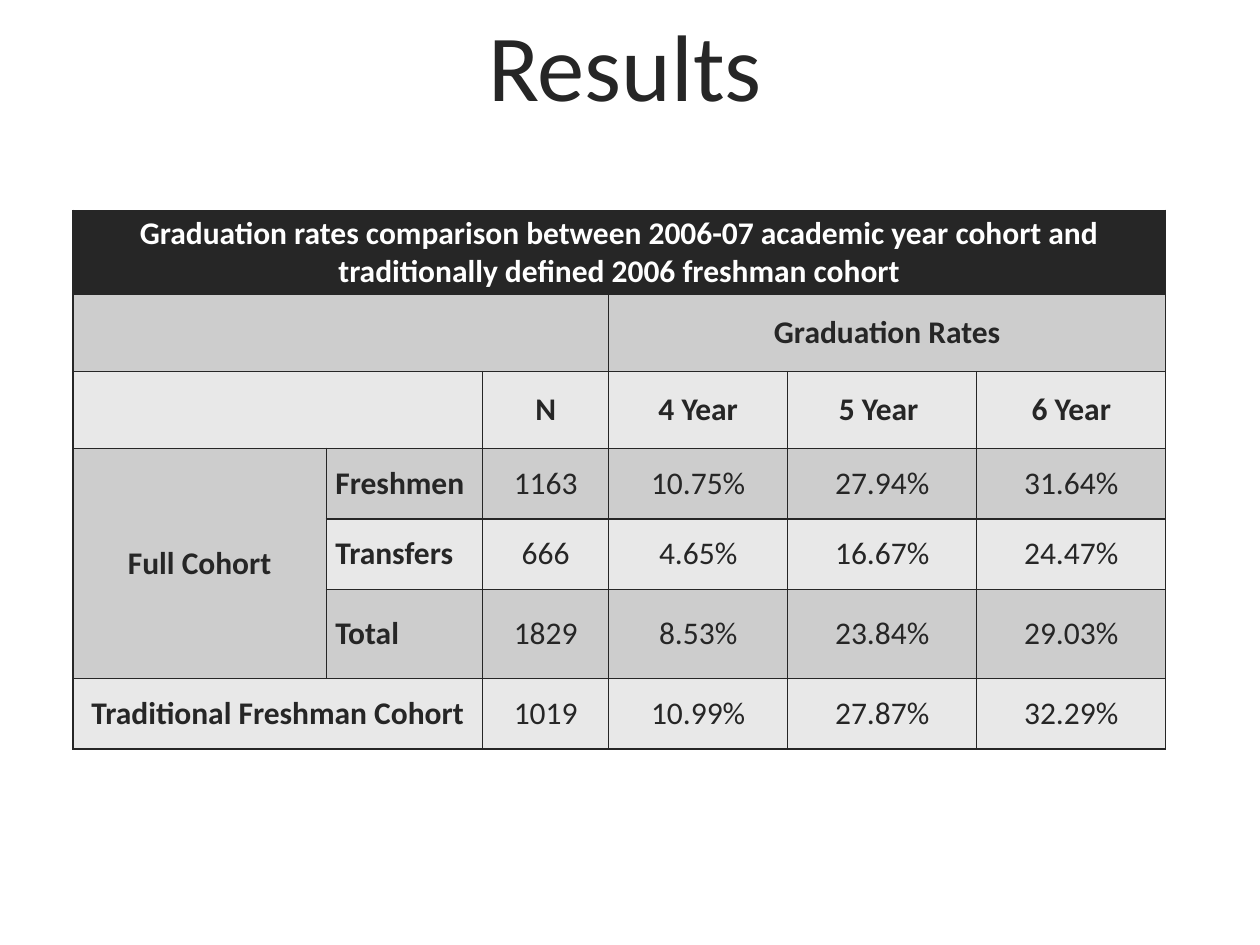
from lxml.etree import SubElement
from pptx import Presentation
from pptx.dml.color import RGBColor
from pptx.enum.text import MSO_ANCHOR, PP_ALIGN
from pptx.oxml.ns import qn
from pptx.util import Cm, Pt

DARK = "262626"
BANDS = ["E8E8E8", "CDCDCD"]


def color(value):
    return RGBColor.from_string(value)


def write(frame, text, size=18, bold=False, fill=DARK, align=PP_ALIGN.CENTER):
    frame.word_wrap = True
    frame.vertical_anchor = MSO_ANCHOR.MIDDLE
    paragraph = frame.paragraphs[0]
    paragraph.alignment = align
    run = paragraph.add_run()
    run.text = text
    run.font.name = "Calibri"
    run.font.size = Pt(size)
    run.font.bold = bold
    run.font.color.rgb = color(fill)


presentation = Presentation()
presentation.slide_width = Cm(25.4)
presentation.slide_height = Cm(19.05)
slide = presentation.slides.add_slide(presentation.slide_layouts[5])

title = slide.shapes.title
title.left, title.top, title.width, title.height = Cm(1.7), Cm(0), Cm(21.8), Cm(2.57)
write(title.text_frame, "Results", size=54)

heading = ("Graduation rates comparison between 2006-07 academic year cohort and "
           "traditionally defined 2006 freshman cohort")
rows = [
    [heading, "", "", "", "", ""],
    ["", "", "", "Graduation Rates", "", ""],
    ["", "", "N", "4 Year", "5 Year ", "6 Year"],
    ["Full Cohort", "Freshmen", "1163", "10.75%", "27.94%", "31.64%"],
    ["", "Transfers", "666", "4.65%", "16.67%", "24.47%"],
    ["", "Total", "1829", "8.53%", "23.84%", "29.03%"],
    ["Traditional Freshman Cohort", "", "1019", "10.99%", "27.87%", "32.29%"],
]
column_widths = [5.11, 3.15, 2.54, 3.61, 3.81, 3.81]
row_heights = [1.7, 1.55, 1.55, 1.42, 1.42, 1.8, 1.42]
merges = [(0, 0, 0, 5), (1, 0, 1, 2), (1, 3, 1, 5), (2, 0, 2, 1), (3, 0, 5, 0), (6, 0, 6, 1)]

table = slide.shapes.add_table(
    len(rows), len(column_widths), Cm(1.47), Cm(4.24),
    Cm(sum(column_widths)), Cm(sum(row_heights))).table
for column, width in zip(table.columns, column_widths):
    column.width = Cm(width)
for row, height in zip(table.rows, row_heights):
    row.height = Cm(height)
for top, left, bottom, right in merges:
    table.cell(top, left).merge(table.cell(bottom, right))

for row_index, texts in enumerate(rows):
    for column_index, text in enumerate(texts):
        cell = table.cell(row_index, column_index)
        cell.margin_left = cell.margin_right = Cm(0.18)
        cell.margin_top = cell.margin_bottom = Cm(0)
        properties = cell._tc.get_or_add_tcPr()
        for side in ("lnL", "lnR", "lnT", "lnB"):
            border = SubElement(properties, qn(f"a:{side}"), w=str(Pt(1)))
            SubElement(SubElement(border, qn("a:solidFill")), qn("a:srgbClr"), val=DARK)
        cell.fill.solid()
        cell.fill.fore_color.rgb = color(BANDS[row_index % 2] if row_index else DARK)
        cell.vertical_anchor = MSO_ANCHOR.MIDDLE
        if text:
            is_group = column_index == 1
            write(cell.text_frame, text,
                  bold=row_index < 3 or column_index < 2,
                  fill=DARK if row_index else "FFFFFF",
                  align=PP_ALIGN.LEFT if is_group else PP_ALIGN.CENTER)

presentation.save("out.pptx")
